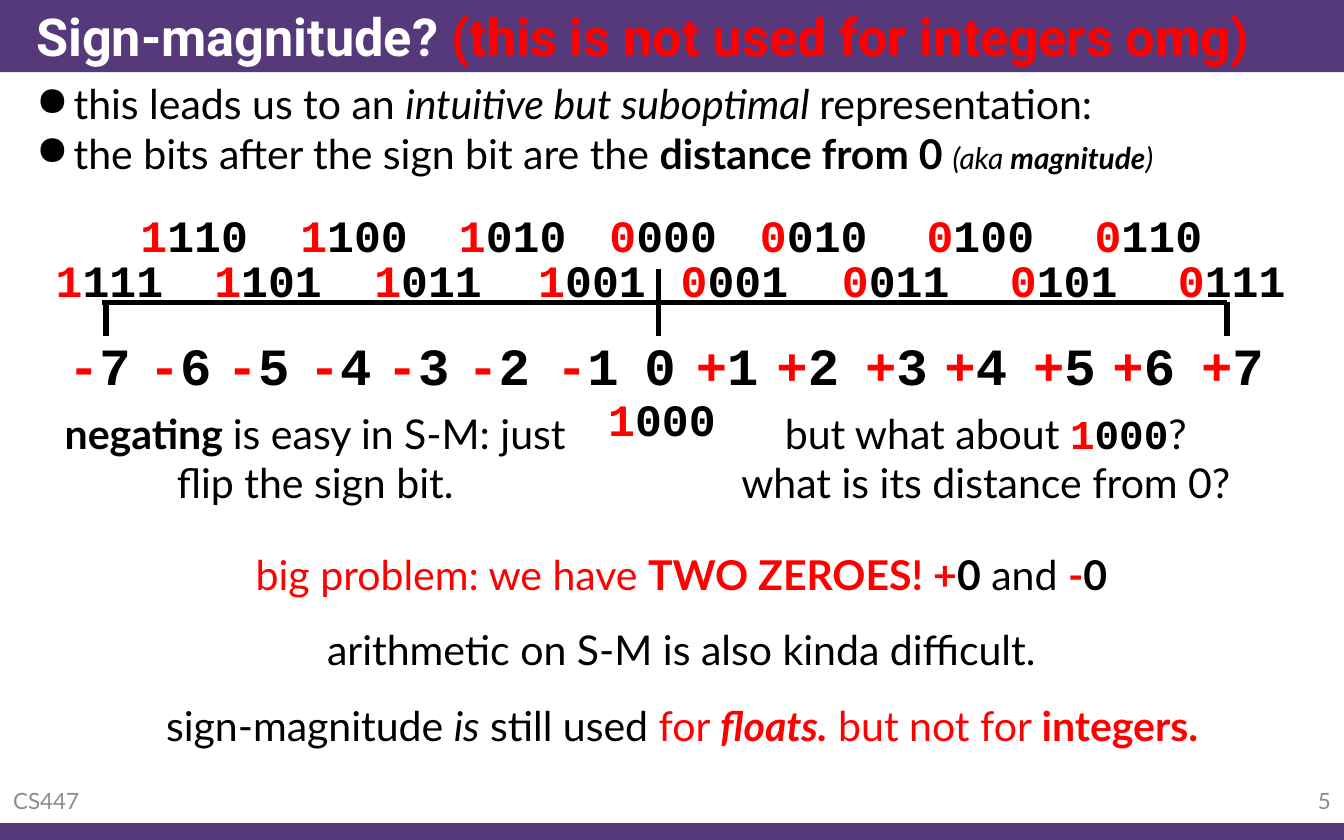
from pptx import Presentation
from pptx.dml.color import RGBColor
from pptx.enum.shapes import MSO_CONNECTOR, MSO_SHAPE
from pptx.enum.text import MSO_ANCHOR, MSO_AUTO_SIZE, PP_ALIGN
from pptx.oxml.ns import qn
from pptx.util import Inches, Pt
from lxml import etree

PURPLE = RGBColor(0x56, 0x39, 0x7B)
WHITE = RGBColor(0xFF, 0xFF, 0xFF)
BLACK = RGBColor(0, 0, 0)
RED = RGBColor(0xFF, 0, 0)
GRAY = RGBColor(0x8C, 0x8C, 0x8C)
LEFT, CENTER, RIGHT = PP_ALIGN.LEFT, PP_ALIGN.CENTER, PP_ALIGN.RIGHT
TOP, MIDDLE = MSO_ANCHOR.TOP, MSO_ANCHOR.MIDDLE
RECT, STRAIGHT = MSO_SHAPE.RECTANGLE, MSO_CONNECTOR.STRAIGHT
NO_FIT = MSO_AUTO_SIZE.NONE

COL, ROW = Inches(0.1), Inches(0.0625)
TITLE_ROWS = 8.6
EVEN_ROW, ODD_ROW, LABEL_ROW = 24, 29.3, 38.9
CODE_SIZE, LABEL_SIZE = (11.7, 8), (6.8, 9.1)

BODY = {"name": "Lato", "size": Pt(22), "bold": False, "italic": False}
TITLE = {"name": "Roboto", "size": Pt(28), "bold": True}
FOOTER = {"name": "Lato", "size": Pt(12)}
CODE = {"name": "Courier New", "size": Pt(24), "bold": True}
LABEL = {"name": "Courier New", "size": Pt(28), "bold": True}
BOLD, ITALIC = {"bold": True}, {"italic": True}
SMALL = {"size": Pt(16), "italic": True}
MONO = {"name": "Courier New", "bold": True}

NUMBERS = range(-7, 8)
CODE_COLS = [2.3, 8.6, 14.1, 20.5, 26, 32.3, 38.2, 43.5,
             48.8, 54.7, 60.8, 67.1, 73.3, 79.6, 85.8]
LABEL_COLS = [4, 10, 15.8, 21.9, 27.7, 33.7, 40.3, 45.7,
              50.7, 56.7, 63.3, 69.2, 75.8, 81.7, 88.3]
AXIS = [(7.6, 36, 91.3, 36), (7.9, 36, 7.9, 40),
        (91.3, 36, 91.3, 40), (49, 32, 49, 40)]

BULLETS = [
    [("this leads us to an ",), ("intuitive but suboptimal ", BLACK, ITALIC),
     ("representation:",)],
    [("the bits after the sign bit are the ",),
     ("distance from 0 ", BLACK, BOLD), ("(aka ", BLACK, SMALL),
     ("magnitude", BLACK, {**SMALL, **BOLD}), (")", BLACK, SMALL)],
]
NOTES = [
    ((3.7, 47.8, 39.5, 13.4),
     [[("negating ", BLACK, BOLD),
       ("is easy in S-M: just flip the sign bit.",)]]),
    ((53.6, 47.8, 39.5, 13.4),
     [[("but what about ",), ("1", RED, MONO), ("000", BLACK, MONO), ("?",)],
      [("what is its distance from 0?",)]]),
    ((15.8, 64.6, 69.8, 7.5),
     [[("big problem: we have ", RED), ("TWO ZEROES! +", RED, BOLD),
       ("0", BLACK, BOLD), (" and ",), ("-", RED, BOLD),
       ("0", BLACK, BOLD)]]),
    ((22.5, 73.6, 56.4, 7.5),
     [[("arithmetic on S-M is also kinda difficult.",)]]),
    ((8.4, 82.6, 84.7, 7.5),
     [[("sign-magnitude ",), ("is", BLACK, ITALIC), (" still used ",),
       ("for ", RED), ("floats.", RED, {**BOLD, **ITALIC}),
       (" but not for ", RED), ("integers.", RED, BOLD)]]),
]


def grid(x, y, w, h):
    """Turn columns and rows into slide lengths."""
    return [int(x * COL), int(y * ROW), int(w * COL), int(h * ROW)]


def add_run(p, base, text, color=BLACK, extra=None):
    """Add one run with the base format and its changes."""
    r = p.add_run()
    r.text = text
    for key, value in {**base, **(extra or {})}.items():
        setattr(r.font, key, value)
    r.font.color.rgb = color


def fill_text(tf, paragraphs, base, align=CENTER, anchor=TOP):
    """Write formatted paragraphs into a text frame."""
    tf.word_wrap = True
    tf.auto_size = NO_FIT
    tf.vertical_anchor = anchor
    for i, runs in enumerate(paragraphs):
        p = tf.paragraphs[0] if i == 0 else tf.add_paragraph()
        p.alignment = align
        for run in runs:
            add_run(p, base, *run)


def add_text(s, box, paragraphs, base, align=CENTER, anchor=TOP):
    """Add a text box on the grid."""
    tf = s.shapes.add_textbox(*grid(*box)).text_frame
    fill_text(tf, paragraphs, base, align, anchor)
    return tf


def add_band(s, y, h):
    """Add a purple band across the slide."""
    sp = s.shapes.add_shape(RECT, *grid(0, y, 100, h))
    sp.shadow.inherit = False
    sp.fill.solid()
    sp.fill.fore_color.rgb = PURPLE
    sp.line.fill.background()


def add_title(s):
    """Place and format the title placeholder."""
    sp = s.shapes.title
    sp.left, sp.top, sp.width, sp.height = grid(1.7, 0, 98.3, TITLE_ROWS)
    runs = [("Sign-magnitude? ", WHITE),
            ("(this is not used for integers omg)", RED)]
    fill_text(sp.text_frame, [runs], TITLE, LEFT, MIDDLE)


def add_bullets(s):
    """Add the bulleted introduction."""
    tf = add_text(s, (1.7, TITLE_ROWS, 98.3, 14.7), BULLETS, BODY, LEFT)
    for p in tf.paragraphs:
        pPr = p._p.get_or_add_pPr()
        pPr.set("marL", str(Inches(0.28)))
        pPr.set("indent", str(-Inches(0.28)))
        etree.SubElement(pPr, qn("a:buChar")).set("char", "●")


def add_line(s, x1, y1, x2, y2):
    """Add a black line of the number axis."""
    c = s.shapes.add_connector(STRAIGHT, *grid(x1, y1, x2, y2))
    c.line.color.rgb = BLACK
    c.line.width = Pt(3)
    etree.SubElement(c._element.spPr, qn("a:effectLst"))


def add_code(s, x, y, bits):
    """Add a bit pattern with a red sign bit."""
    runs = [(bits[0], RED), (bits[1:],)]
    add_text(s, (x, y, *CODE_SIZE), [runs], CODE)


def add_number(s, n, code_col, label_col):
    """Add a number and its bit pattern to the axis."""
    add_code(s, code_col, ODD_ROW if n % 2 else EVEN_ROW,
             f"{int(n < 0)}{abs(n):03b}")
    label = f"{n:+d}" if n else "0"
    runs = [(label[:-1], RED)] if n else []
    add_text(s, (label_col, LABEL_ROW, *LABEL_SIZE),
             [runs + [(label[-1],)]], LABEL)


def main():
    """Build and save the slide."""
    prs = Presentation()
    prs.slide_width, prs.slide_height = 100 * COL, 100 * ROW
    s = prs.slides.add_slide(prs.slide_layouts[5])
    add_band(s, 98, 2)
    add_band(s, 0, TITLE_ROWS)
    title = s.shapes.title
    s.shapes._spTree.append(title._element)
    add_title(s)
    add_bullets(s)
    for line in AXIS:
        add_line(s, *line)
    for number in zip(NUMBERS, CODE_COLS, LABEL_COLS):
        add_number(s, *number)
    add_code(s, 43.4, 45.9, "1000")
    for box, paragraphs in NOTES:
        add_text(s, box, paragraphs, BODY)
    add_text(s, (0, 92.6, 13.3, 5.3), [[("CS447", GRAY)]],
             FOOTER, LEFT, MIDDLE)
    add_text(s, (92.5, 92.6, 7.5, 5.3), [[("5", GRAY)]],
             FOOTER, RIGHT, MIDDLE)
    prs.save("out.pptx")


if __name__ == "__main__":
    main()
